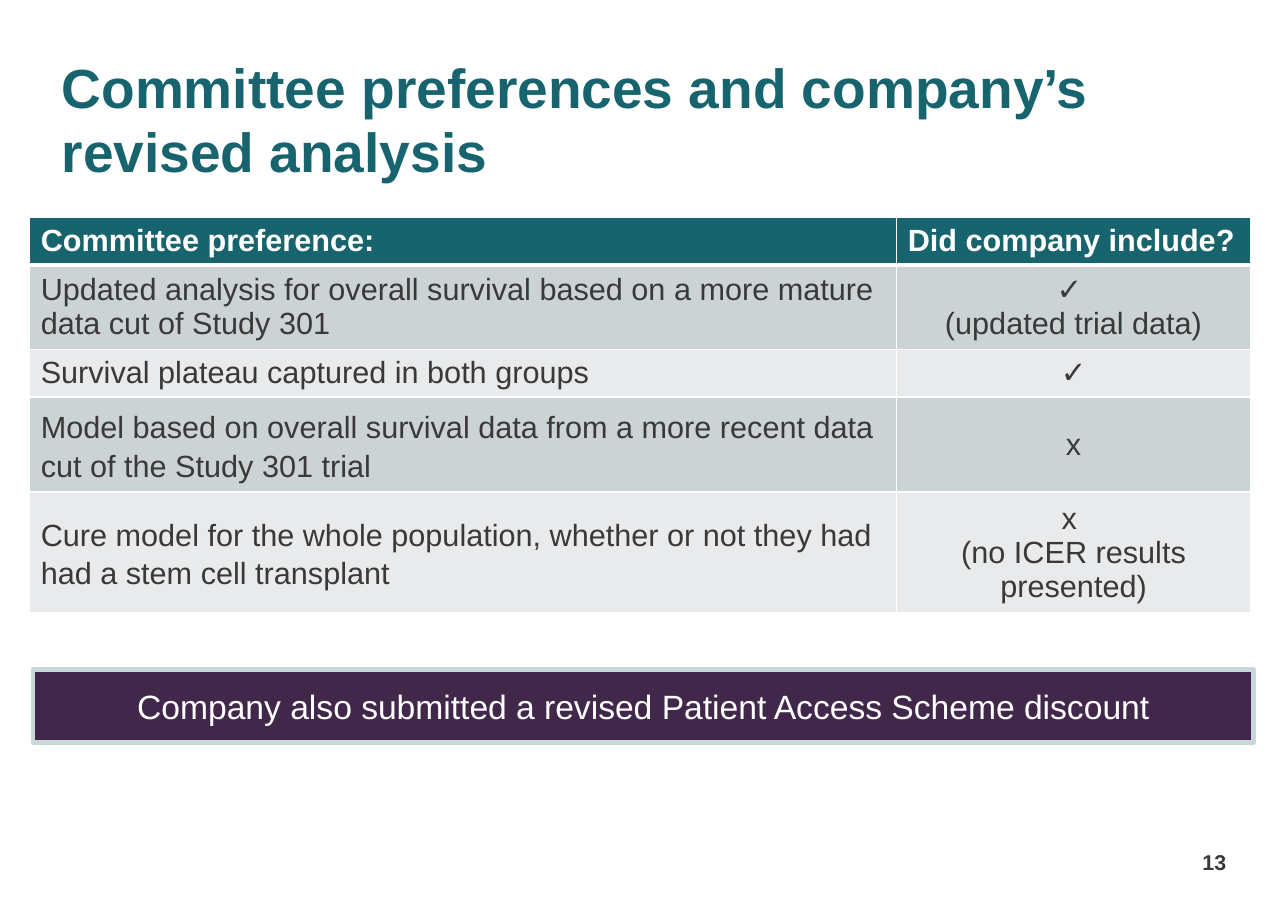
import dataclasses
import typing

import lxml.etree
import pptx
import pptx.dml.color
import pptx.enum.shapes
import pptx.enum.text
import pptx.oxml
import pptx.oxml.ns
import pptx.util

Inches = pptx.util.Inches
Pt = pptx.util.Pt
Align = pptx.enum.text.PP_ALIGN
Anchor = pptx.enum.text.MSO_ANCHOR


@dataclasses.dataclass(frozen=True)
class Theme:
    font: str = "Arial"
    teal: str = "18646E"
    ink: str = "393938"
    white: str = "FFFFFF"
    bands: tuple[str, str] = ("CCD3D5", "E8EAEB")
    plum: str = "41284A"
    frame: str = "C7D7DA"
    title: int = 36
    note: int = 22
    body: int = 20
    number: int = 14


@dataclasses.dataclass(frozen=True)
class Row:
    wish: str
    answer: str
    height: float
    spacing: float = 1.0
    ticked: bool = False


THEME = Theme()
WIDTHS = (7.87, 3.21)
HEAD = Row("Committee preference:", "Did company include?", 0.41)
ROWS = (
    Row("Updated analysis for overall survival based on a more mature data cut of Study 301",
        "✓ \n(updated trial data)", 0.72, ticked=True),
    Row("Survival plateau captured in both groups", "✓", 0.41, ticked=True),
    Row("Model based on overall survival data from a more recent data cut of the Study 301 trial",
        "x", 0.81, spacing=1.14),
    Row("Cure model for the whole population, whether or not they had had a stem cell transplant",
        "x \n(no ICER results presented)", 1.03, spacing=1.14),
)


def paint(fill: typing.Any, color: str) -> None:
    fill.solid()
    fill.fore_color.rgb = pptx.dml.color.RGBColor.from_string(color)


def write(frame: typing.Any, text: str, *, size: int, color: str, bold: bool = False,
          lead: bool = False, align: typing.Any = Align.LEFT, spacing: typing.Any = 1.0) -> None:
    """Write one paragraph per line of text; lead makes only the first one bold."""
    frame.word_wrap = True
    for index, line in enumerate(text.split("\n")):
        para = frame.add_paragraph() if index else frame.paragraphs[0]
        para.text = line
        para.alignment = align
        para.line_spacing = spacing
        for run in para.runs:
            run.font.name = THEME.font
            run.font.size = Pt(size)
            run.font.bold = bold or (lead and index == 0)
            paint(run.font.fill, color)


def add_box(slide: typing.Any, place: tuple[float, ...], anchor: typing.Any) -> typing.Any:
    frame = slide.shapes.add_textbox(*map(Inches, place)).text_frame
    frame.margin_left = frame.margin_right = frame.margin_top = frame.margin_bottom = 0
    frame.vertical_anchor = anchor
    return frame


def edge(cell: typing.Any, base: int) -> None:
    """Draw white cell borders, with the given width in points below."""
    props = cell._tc.get_or_add_tcPr()
    for side, width in (("L", 1), ("R", 1), ("T", 1), ("B", base)):
        line = lxml.etree.SubElement(props, pptx.oxml.ns.qn(f"a:ln{side}"), w=str(Pt(width)))
        fill = lxml.etree.SubElement(line, pptx.oxml.ns.qn("a:solidFill"))
        lxml.etree.SubElement(fill, pptx.oxml.ns.qn("a:srgbClr"), val=THEME.white)


def style(cell: typing.Any, fill: str, base: int) -> None:
    edge(cell, base)
    paint(cell.fill, fill)
    cell.vertical_anchor = Anchor.MIDDLE


def add_grid(slide: typing.Any) -> None:
    rows = (HEAD, *ROWS)
    place = (0.27, 1.97, sum(WIDTHS), sum(row.height for row in rows))
    table = slide.shapes.add_table(len(rows), len(WIDTHS), *map(Inches, place)).table
    table.first_row = table.horz_banding = False
    for column, width in zip(table.columns, WIDTHS):
        column.width = Inches(width)
    for index, row in enumerate(rows):
        table.rows[index].height = Inches(row.height)
        wish, answer = table.cell(index, 0), table.cell(index, 1)
        is_head = row is HEAD
        fill = THEME.teal if is_head else THEME.bands[(index - 1) % 2]
        color = THEME.white if is_head else THEME.ink
        for cell in (wish, answer):
            style(cell, fill, 3 if is_head else 1)
        write(wish.text_frame, row.wish, size=THEME.body, color=color, bold=is_head,
              spacing=row.spacing)
        write(answer.text_frame, row.answer, size=THEME.body, color=color, bold=is_head,
              lead=row.ticked, align=Align.LEFT if is_head else Align.CENTER)


def add_note(slide: typing.Any) -> None:
    note = slide.shapes.add_shape(pptx.enum.shapes.MSO_SHAPE.RECTANGLE,
                                  *map(Inches, (0.3, 6.08, 11.08, 0.66)))
    note.shadow.inherit = False
    paint(note.fill, THEME.plum)
    paint(note.line.fill, THEME.frame)
    note.line.width = Pt(3)
    note.text_frame.vertical_anchor = Anchor.MIDDLE
    write(note.text_frame, "Company also submitted a revised Patient Access Scheme discount",
          size=THEME.note, color=THEME.white, align=Align.CENTER)


def main() -> None:
    deck = pptx.Presentation()
    deck.slide_width, deck.slide_height = Inches(11.69), Inches(8.27)
    slide = deck.slides.add_slide(deck.slide_layouts[6])
    write(add_box(slide, (0.56, 0.5, 10.57, 0.84), Anchor.TOP),
          "Committee preferences and company’s \vrevised analysis",
          size=THEME.title, color=THEME.teal, bold=True, spacing=Pt(42))
    write(add_box(slide, (10.58, 7.58, 0.55, 0.36), Anchor.BOTTOM), "13",
          size=THEME.number, color=THEME.ink, bold=True, align=Align.RIGHT)
    add_grid(slide)
    add_note(slide)
    deck.save("out.pptx")


if __name__ == "__main__":
    main()
